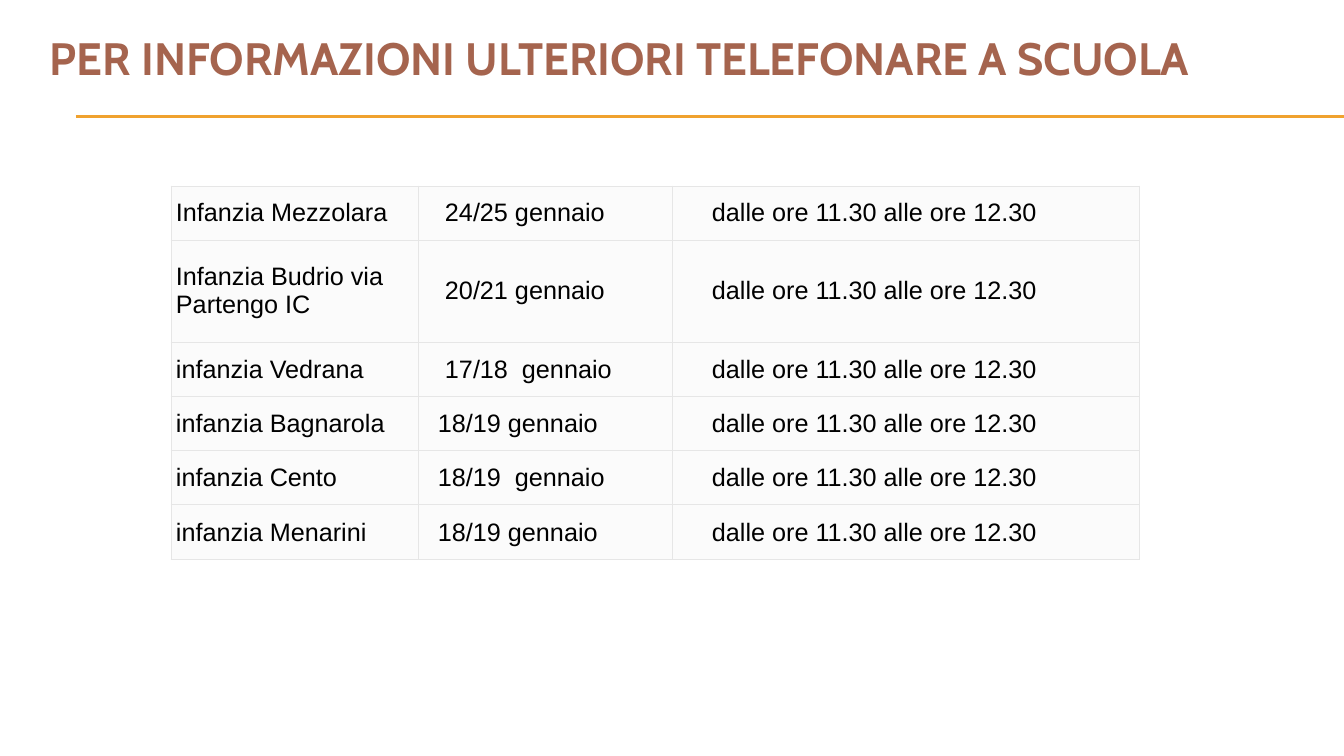
import dataclasses

import lxml.etree
import pptx
import pptx.dml.color
import pptx.enum.shapes
import pptx.enum.text
import pptx.oxml.ns
import pptx.util

EMU_PER_PX = 914400 / 100.8
HOURS = "dalle ore 11.30 alle ore 12.30"
COLUMN_WIDTHS = [247, 254, 468]
SCHOOLS = [
    ("Infanzia Mezzolara", "24/25 gennaio", 27, 54),
    ("Infanzia Budrio via Partengo IC", "20/21 gennaio", 27, 102),
    ("infanzia Vedrana", "17/18  gennaio", 27, 55),
    ("infanzia Bagnarola", "18/19 gennaio", 20, 54),
    ("infanzia Cento", "18/19  gennaio", 20, 54),
    ("infanzia Menarini", "18/19 gennaio", 20, 55),
]


@dataclasses.dataclass(frozen=True)
class Theme:
    """Colours, fonts and type sizes of the slide."""
    background: str = "FFFFFF"
    title: str = "A5644E"
    rule: str = "F0A22E"
    text: str = "000000"
    cell: str = "FBFBFB"
    border: str = "E6E6E6"
    title_font: str = "Cabin"
    body_font: str = "Arial"
    title_size: float = 32.4
    body_size: float = 18
    line_width: float = 0.75


THEME = Theme()


def px(length):
    """Turn pixels into EMU."""
    return pptx.util.Emu(round(length * EMU_PER_PX))


def rgb(colour):
    """Return a colour object for a hex value."""
    return pptx.dml.color.RGBColor.from_string(colour)


def set_font(paragraph, name, size, colour, bold=False):
    """Set the font of a whole paragraph."""
    font = paragraph.font
    font.name, font.size, font.bold = name, pptx.util.Pt(size), bold
    font.color.rgb = rgb(colour)


def add_rules(slide, left, top, width):
    """Draw the pair of thin lines under the title."""
    for y in (top, top + 1):
        rule = slide.shapes.add_connector(
            pptx.enum.shapes.MSO_CONNECTOR.STRAIGHT, px(left), px(y), px(left + width), px(y))
        rule.line.color.rgb = rgb(THEME.rule)
        rule.line.width = pptx.util.Pt(THEME.line_width)
        properties = rule._element.spPr
        lxml.etree.SubElement(properties, pptx.oxml.ns.qn("a:effectLst"))


def add_title(slide, left, top, width, height):
    """Place the slide title in its box."""
    frame = slide.shapes.add_textbox(px(left), px(top), px(width), px(height)).text_frame
    frame.word_wrap = True
    frame.vertical_anchor = pptx.enum.text.MSO_ANCHOR.MIDDLE
    paragraph = frame.paragraphs[0]
    paragraph.text = "PER INFORMAZIONI ULTERIORI TELEFONARE A SCUOLA"
    set_font(paragraph, THEME.title_font, THEME.title_size, THEME.title, True)


def add_borders(cell):
    """Put a thin line on each side of a cell, ahead of its fill."""
    properties = cell._tc.get_or_add_tcPr()
    for position, side in enumerate(("lnL", "lnR", "lnT", "lnB")):
        line = lxml.etree.Element(
            pptx.oxml.ns.qn(f"a:{side}"), w=str(pptx.util.Pt(THEME.line_width)))
        fill = lxml.etree.SubElement(line, pptx.oxml.ns.qn("a:solidFill"))
        lxml.etree.SubElement(fill, pptx.oxml.ns.qn("a:srgbClr"), val=THEME.border)
        properties.insert(position, line)


def fill_cell(cell, text, indent):
    """Write and style one table cell."""
    cell.text = text
    cell.vertical_anchor = pptx.enum.text.MSO_ANCHOR.MIDDLE
    cell.margin_left, cell.margin_right = px(indent), px(5)
    cell.margin_top = cell.margin_bottom = px(2)
    cell.fill.solid()
    cell.fill.fore_color.rgb = rgb(THEME.cell)
    add_borders(cell)
    set_font(cell.text_frame.paragraphs[0], THEME.body_font, THEME.body_size, THEME.text)


def add_schedule(slide, left, top):
    """Place the table of schools, days and hours."""
    height = sum(school[-1] for school in SCHOOLS)
    table = slide.shapes.add_table(
        len(SCHOOLS), len(COLUMN_WIDTHS), px(left), px(top),
        px(sum(COLUMN_WIDTHS)), px(height)).table
    table.first_row = table.horz_banding = False
    for column, width in zip(table.columns, COLUMN_WIDTHS):
        column.width = px(width)
    for row, (school, days, days_indent, row_height) in zip(table.rows, SCHOOLS):
        row.height = px(row_height)
        contents = ((school, 5), (days, days_indent), (HOURS, 40))
        for cell, (text, indent) in zip(row.cells, contents):
            fill_cell(cell, text, indent)


def main():
    """Build the slide and save it."""
    presentation = pptx.Presentation()
    presentation.slide_width, presentation.slide_height = px(1344), px(756)
    slide = presentation.slides.add_slide(presentation.slide_layouts[6])
    slide.background.fill.solid()
    slide.background.fill.fore_color.rgb = rgb(THEME.background)
    add_rules(slide, 76, 116, 1268)
    add_title(slide, 40, 20, 1304, 75)
    add_schedule(slide, 171, 186)
    presentation.save("out.pptx")


if __name__ == "__main__":
    main()
